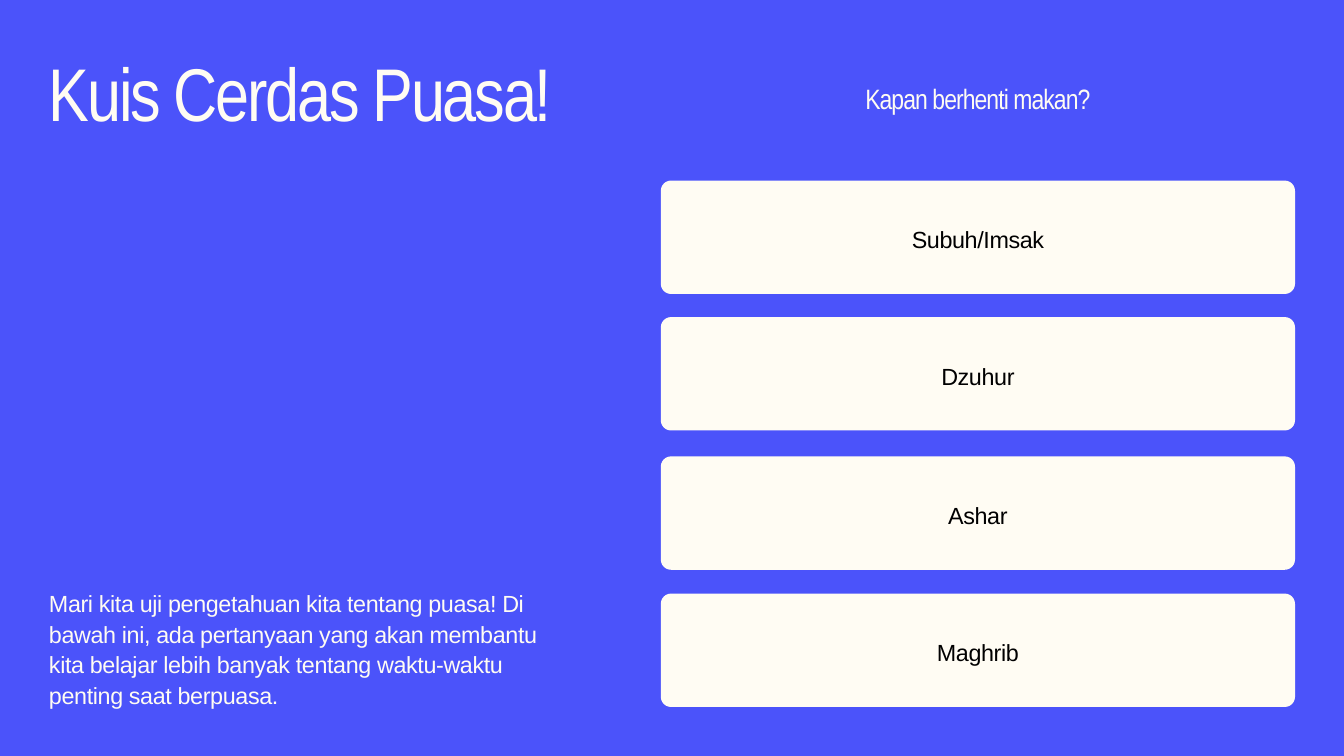
from pptx import Presentation
from pptx import util as u
from pptx.dml.color import RGBColor
from pptx.enum import shapes, text

PX = 9525
HUES = {"back": "4B53FA", "cream": "FFFCF3", "ink": "000000"}
LEFT = text.PP_ALIGN.LEFT
MID = text.PP_ALIGN.CENTER
TOP = text.MSO_ANCHOR.TOP

STYLES = {
    "title": {"face": "Arial Narrow", "size": 80, "line": 88, "track": -240,
              "hue": "cream", "align": LEFT, "anchor": TOP},
    "ask": {"face": "Arial Narrow", "size": 30, "line": 39, "track": -100,
            "hue": "cream", "align": MID, "anchor": TOP},
    "intro": {"face": "Arial", "size": 25, "line": 32.5, "track": -40,
              "hue": "cream", "align": LEFT, "anchor": TOP},
    "answer": {"face": "Arial", "size": 25, "line": 35, "track": -40,
               "hue": "ink", "align": MID, "anchor": text.MSO_ANCHOR.MIDDLE},
}
INTRO = ("Mari kita uji pengetahuan kita tentang puasa! Di bawah ini, ada "
         "pertanyaan yang akan membantu kita belajar lebih banyak tentang "
         "waktu-waktu penting saat berpuasa.")
ANSWERS = {"Subuh/Imsak": 258, "Dzuhur": 453, "Ashar": 652, "Maghrib": 848}


def scale(*sides):
    return [u.Emu(side * PX) for side in sides]


def color(name):
    return RGBColor.from_string(HUES[name])


def apply(item, values):
    for name, value in values.items():
        setattr(item, name, value)


def write(shape, words, style):
    look = STYLES[style]
    frame = shape.text_frame
    apply(frame, {"margin_left": 0, "margin_right": 0, "margin_top": 0,
                  "margin_bottom": 0, "word_wrap": True,
                  "auto_size": text.MSO_AUTO_SIZE.NONE,
                  "vertical_anchor": look["anchor"]})
    para = frame.paragraphs[0]
    apply(para, {"alignment": look["align"],
                 "line_spacing": u.Pt(look["line"])})
    run = para.add_run()
    run.text = words
    apply(run.font, {"name": look["face"], "size": u.Pt(look["size"])})
    run.font.color.rgb = color(look["hue"])
    run._r.get_or_add_rPr().set("spc", str(look["track"]))


def add_title(slide, words, box):
    title = slide.shapes.title
    apply(title, dict(zip(("left", "top", "width", "height"), scale(*box))))
    write(title, words, "title")


def add_text(slide, words, box, style):
    write(slide.shapes.add_textbox(*scale(*box)), words, style)


def add_card(slide, words, box):
    card = slide.shapes.add_shape(
        shapes.MSO_SHAPE.ROUNDED_RECTANGLE, *scale(*box))
    card.adjustments[0] = 0.09
    card.shadow.inherit = False
    card.fill.solid()
    card.fill.fore_color.rgb = color("cream")
    card.line.fill.background()
    write(card, words, "answer")


def main():
    deck = Presentation()
    deck.slide_width, deck.slide_height = scale(1920, 1080)
    slide = deck.slides.add_slide(deck.slide_layouts.get_by_name("Title Only"))
    slide.background.fill.solid()
    slide.background.fill.fore_color.rgb = color("back")
    add_title(slide, "Kuis Cerdas Puasa!", (70, 77, 723, 238))
    add_text(slide, INTRO, (70, 839, 723, 171), "intro")
    add_text(slide, "Kapan berhenti makan?", (944, 113, 906, 51), "ask")
    for words, top in ANSWERS.items():
        add_card(slide, words, (944, top, 906, 162))
    deck.save("out.pptx")


if __name__ == "__main__":
    main()
